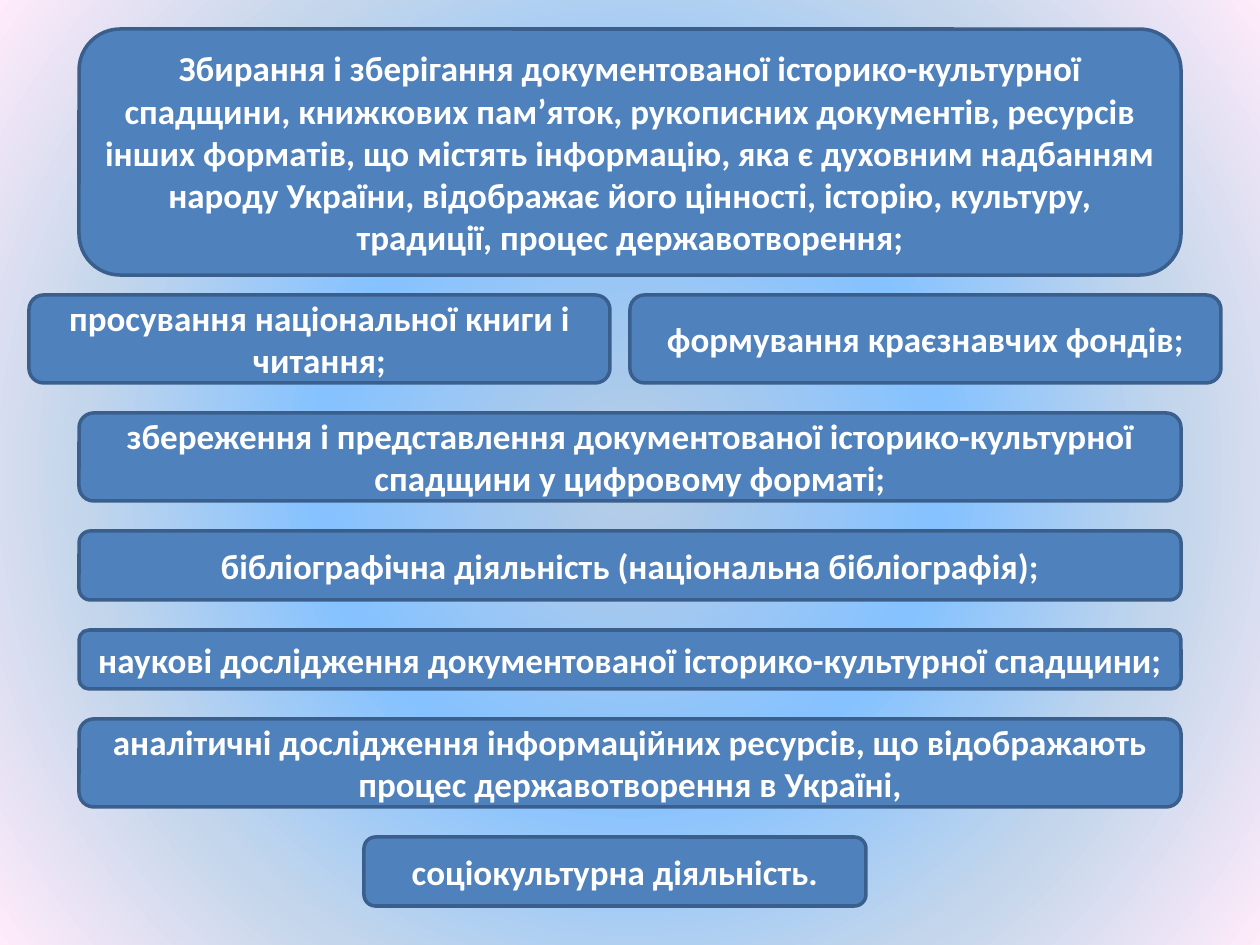
from lxml import etree
from pptx import Presentation
from pptx.dml.color import RGBColor
from pptx.enum.shapes import MSO_SHAPE
from pptx.enum.text import MSO_ANCHOR, PP_ALIGN
from pptx.oxml.ns import qn
from pptx.util import Emu, Pt

ROUNDED = MSO_SHAPE.ROUNDED_RECTANGLE
MIDDLE = MSO_ANCHOR.MIDDLE
CENTER = PP_ALIGN.CENTER
SCALE = 914400 / 126
PAGE_WIDTH, PAGE_HEIGHT = 1260, 945
BLANK_LAYOUT = 6
TOP, GAP = 29, 30
FULL = (79, 1102)
GLOW = [(0, "B9CDE5"), (40, "85C2FF"), (70, "C4D6EB"), (100, "FFEBFA")]

# Each band: height, gap below, and its boxes as (left, width), text.
BANDS = [
    (246, 20, [(FULL, "Збирання і зберігання документованої історико-культурної спадщини, "
                      "книжкових пам’яток, рукописних документів, ресурсів інших форматів, "
                      "що містять інформацію, яка є духовним надбанням народу України, "
                      "відображає його цінності, історію, культуру, традиції, "
                      "процес державотворення;")]),
    (88, GAP, [((29, 581), "просування національної книги і читання;"),
               ((630, 591), "формування краєзнавчих фондів;")]),
    (88, GAP, [(FULL, "збереження і представлення документованої історико-культурної "
                      "спадщини у цифровому форматі;")]),
    (69, GAP, [(FULL, "бібліографічна діяльність (національна бібліографія);")]),
    (59, GAP, [(FULL, "наукові дослідження документованої історико-культурної спадщини;")]),
    (88, GAP, [(FULL, "аналітичні дослідження інформаційних ресурсів, що відображають "
                      "процес державотворення в Україні,")]),
    (69, GAP, [((364, 502), "соціокультурна діяльність.")]),
]


def px(length):
    """Turn pixels into EMU."""
    return Emu(round(length * SCALE))


def color(value):
    """Turn a hex string into a colour."""
    return RGBColor.from_string(value)


def paint_background(page, stops):
    """Fill the page with a circular gradient spreading from its centre."""
    page.background.fill.gradient()
    gradient = next(page.background._cSld.iter(qn("a:gradFill")))
    for child in list(gradient):
        gradient.remove(child)
    stop_list = etree.SubElement(gradient, qn("a:gsLst"))
    for percent, value in stops:
        stop = etree.SubElement(stop_list, qn("a:gs"), pos=str(percent * 1000))
        etree.SubElement(stop, qn("a:srgbClr"), val=value)
    circle = etree.SubElement(gradient, qn("a:path"), path="circle")
    etree.SubElement(circle, qn("a:fillToRect"), {side: "50000" for side in "ltrb"})


def write(box, text, size=20, font="Calibri", fill="FFFFFF", bold=True):
    """Put centred, formatted text into a box."""
    frame = box.text_frame
    frame.word_wrap = True
    frame.vertical_anchor = MIDDLE
    para = frame.paragraphs[0]
    para.alignment = CENTER
    span = para.add_run()
    span.text = text
    span.font.size = Pt(size)
    span.font.name = font
    span.font.bold = bold
    span.font.color.rgb = color(fill)


def add_box(page, left, top, width, height, text):
    """Add a rounded blue box with its text."""
    box = page.shapes.add_shape(ROUNDED, px(left), px(top), px(width), px(height))
    box.shadow.inherit = False
    box.fill.solid()
    box.fill.fore_color.rgb = color("4F81BD")
    box.line.color.rgb = color("3A5F8C")
    box.line.width = Pt(2)
    write(box, text)


def main():
    """Build the slide and save it."""
    deck = Presentation()
    deck.slide_width, deck.slide_height = px(PAGE_WIDTH), px(PAGE_HEIGHT)
    page = deck.slides.add_slide(deck.slide_layouts[BLANK_LAYOUT])
    paint_background(page, GLOW)
    top = TOP
    for height, gap, boxes in BANDS:
        for (left, width), text in boxes:
            add_box(page, left, top, width, height, text)
        top += height + gap
    deck.save("out.pptx")


if __name__ == "__main__":
    main()
